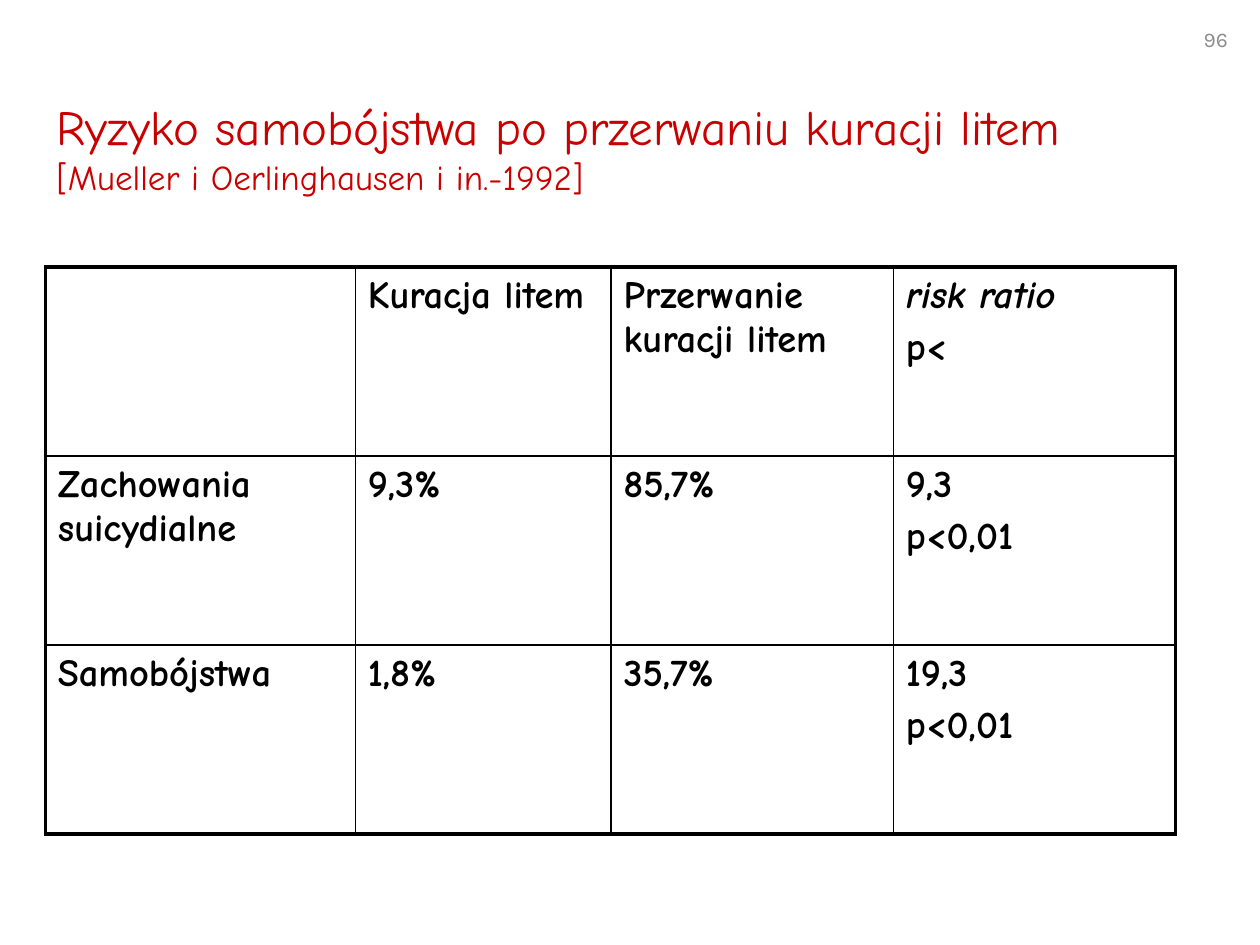
from dataclasses import dataclass

from lxml.etree import SubElement
from pptx import Presentation
from pptx.dml.color import RGBColor
from pptx.enum.shapes import MSO_SHAPE
from pptx.enum.text import MSO_ANCHOR, MSO_AUTO_SIZE, PP_ALIGN
from pptx.oxml.ns import qn
from pptx.util import Inches, Pt


@dataclass(frozen=True)
class Theme:
    title_font: str = "Comic Neue"
    number_font: str = "Karla"
    red: str = "C80000"
    black: str = "000000"
    gray: str = "8C8C8C"
    title: int = 28
    source: int = 20
    body: int = 22
    number: int = 12
    space: float = 4.4
    outer: float = 2.25
    inner: float = 1


T = Theme()
TITLE = "Ryzyko samobójstwa po przerwaniu kuracji litem"
SOURCE = "[Mueller i Oerlinghausen i in.-1992]"
PAGE = "96"
ITALIC = "risk ratio"
ROWS = [
    [[], ["Kuracja litem"], ["Przerwanie kuracji litem"], [ITALIC, "p<"]],
    [["Zachowania suicydialne"], ["9,3%"], ["85,7%"], ["9,3", "p<0,01"]],
    [["Samobójstwa"], ["1,8%"], ["35,7%"], ["19,3", "p<0,01"]],
]
COLS = [2.46, 2.03, 2.24, 2.24]
ROW_H = 1.5


def add_run(p, text, font, size, color, bold=False, italic=False):
    r = p.add_run()
    r.text = text
    r.font.name, r.font.size = font, Pt(size)
    r.font.bold, r.font.italic = bold, italic
    r.font.color.rgb = RGBColor.from_string(color)


def place(sp, left, top, width, height):
    sp.left, sp.top = Inches(left), Inches(top)
    sp.width, sp.height = Inches(width), Inches(height)


def set_borders(cell, widths):
    tcPr = cell._tc.get_or_add_tcPr()
    for i, (side, width) in enumerate(widths.items()):
        ln = tcPr.makeelement(qn(f"a:{side}"), {"w": str(Pt(width))})
        fill = SubElement(ln, qn("a:solidFill"))
        SubElement(fill, qn("a:srgbClr"), val=T.black)
        tcPr.insert(i, ln)


def add_title(s):
    sp = s.shapes.title
    place(sp, 0.35, 0.72, 9.45, 0.9)
    tf = sp.text_frame
    tf.word_wrap = True
    tf.auto_size = MSO_AUTO_SIZE.SHAPE_TO_FIT_TEXT
    tf.vertical_anchor = MSO_ANCHOR.BOTTOM
    p = tf.paragraphs[0]
    p.alignment = PP_ALIGN.LEFT
    add_run(p, TITLE, T.title_font, T.title, T.red)
    p.add_line_break()
    SubElement(p._p.find(qn("a:br")), qn("a:rPr"), sz=str(T.title * 100))
    add_run(p, SOURCE, T.title_font, T.source, T.red)


def add_page_number(s):
    sp = s.shapes.add_shape(MSO_SHAPE.ROUNDED_RECTANGLE, 0, 0, 0, 0)
    place(sp, 9.3, 0, 0.7, 0.62)
    sp.shadow.inherit = False
    sp.fill.background()
    sp.line.fill.background()
    tf = sp.text_frame
    tf.vertical_anchor = MSO_ANCHOR.MIDDLE
    p = tf.paragraphs[0]
    p.alignment = PP_ALIGN.CENTER
    add_run(p, PAGE, T.number_font, T.number, T.gray)


def add_risk_table(s):
    n_rows, n_cols = len(ROWS), len(COLS)
    table = s.shapes.add_table(
        n_rows, n_cols, Inches(0.36), Inches(2.12),
        Inches(sum(COLS)), Inches(ROW_H * n_rows)).table
    table.first_row = table.horz_banding = False
    for col, width in zip(table.columns, COLS):
        col.width = Inches(width)
    for i, row in enumerate(ROWS):
        table.rows[i].height = Inches(ROW_H)
        for j, lines in enumerate(row):
            cell = table.cell(i, j)
            cell.fill.background()
            edges = {"lnL": j == 0, "lnR": j == n_cols - 1,
                     "lnT": i == 0, "lnB": i == n_rows - 1}
            set_borders(cell, {side: T.outer if edge else T.inner
                               for side, edge in edges.items()})
            tf = cell.text_frame
            for k, text in enumerate(lines):
                p = tf.add_paragraph() if k else tf.paragraphs[0]
                if k:
                    p.space_before = Pt(T.space)
                add_run(p, text, T.title_font, T.body, T.black,
                        bold=True, italic=text == ITALIC)


def main():
    prs = Presentation()
    prs.slide_width, prs.slide_height = Inches(10), Inches(7.5)
    s = prs.slides.add_slide(prs.slide_layouts[5])
    add_page_number(s)
    add_title(s)
    add_risk_table(s)
    prs.save("out.pptx")


if __name__ == "__main__":
    main()
